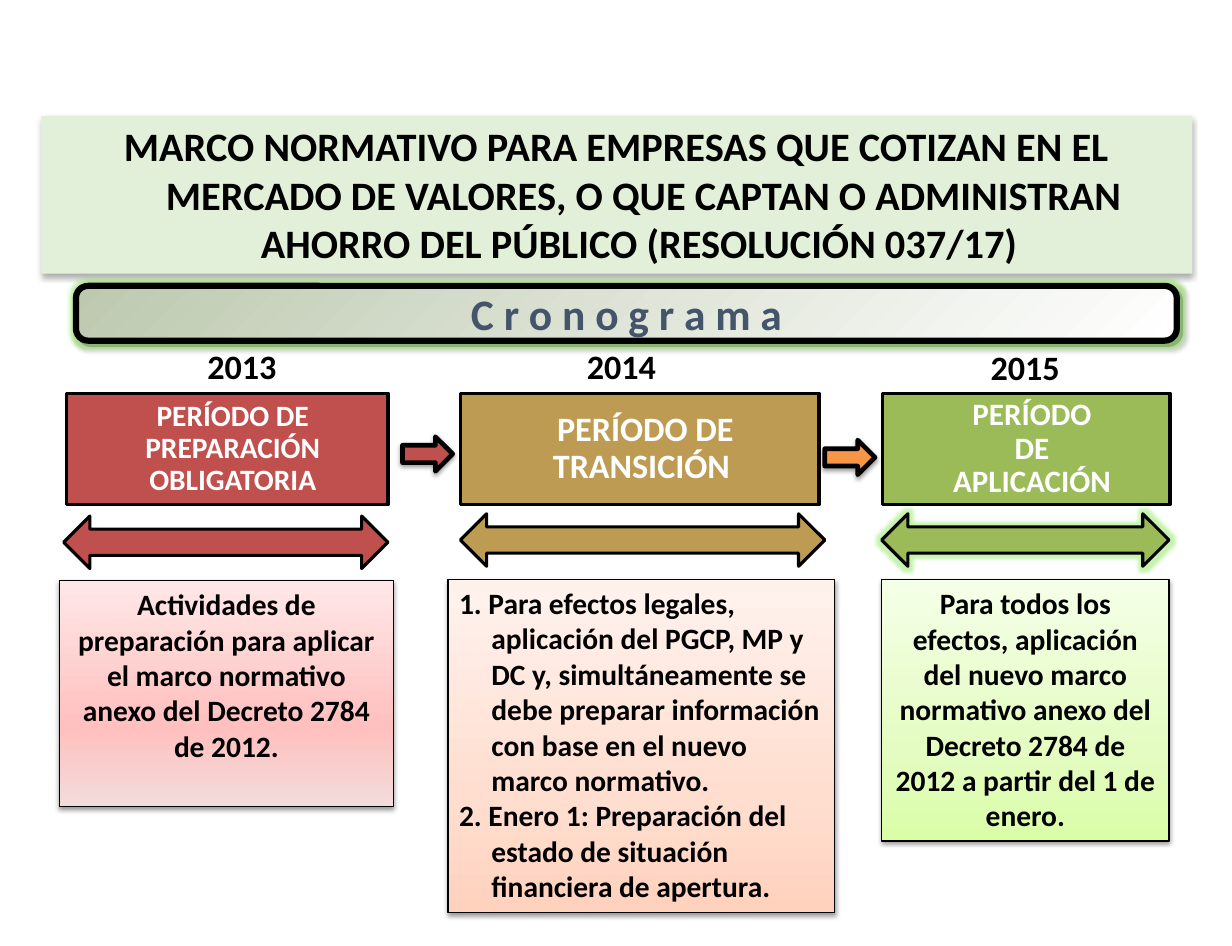
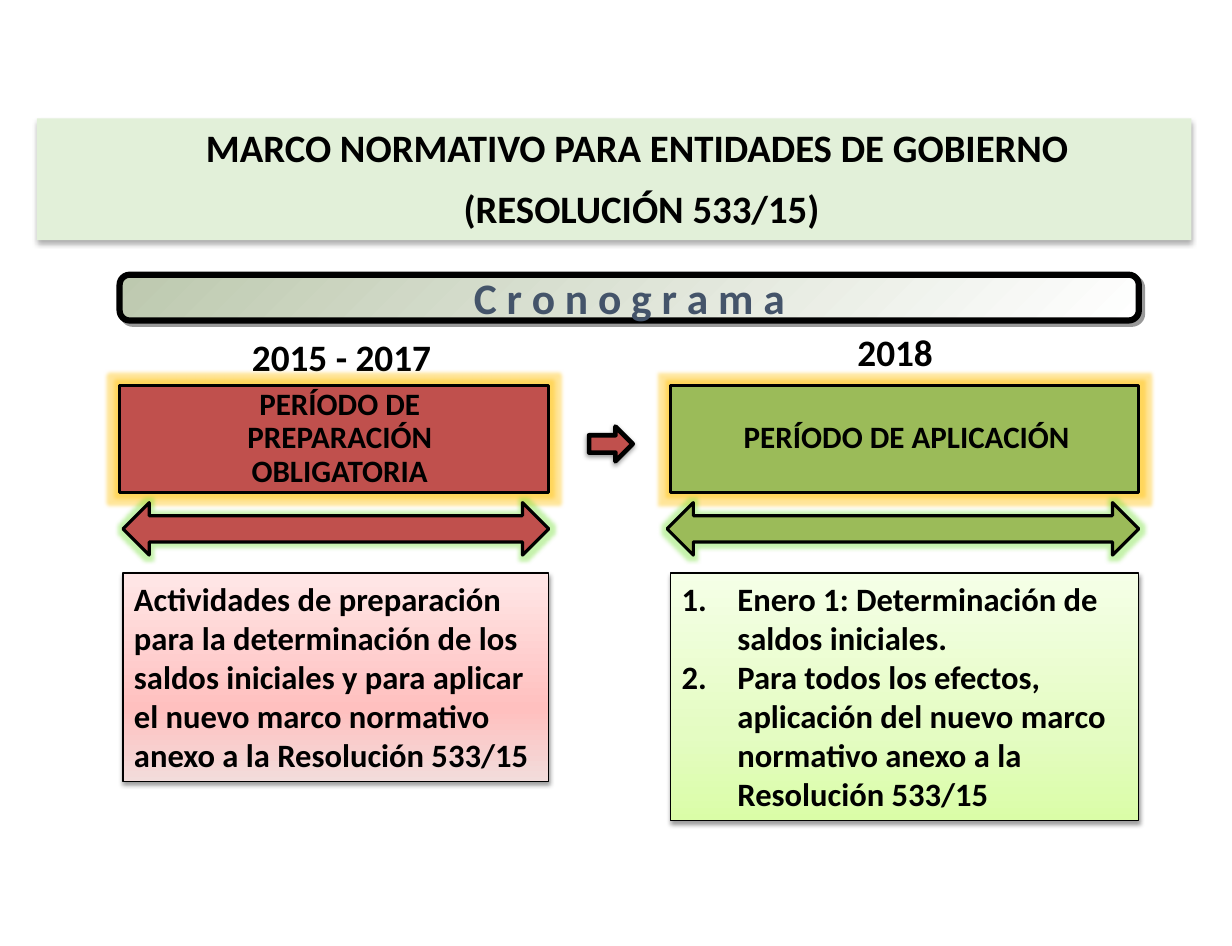
"""Two timelines for adopting the accounting frameworks, 2013-2015 and 2015-2018."""
import lxml.etree
import pptx
import pptx.dml.color
import pptx.enum.shapes
import pptx.enum.text
import pptx.oxml.ns
import pptx.util

SHAPE = pptx.enum.shapes.MSO_SHAPE
CENTER = pptx.enum.text.PP_ALIGN.CENTER
LEFT = pptx.enum.text.PP_ALIGN.LEFT
MIDDLE = pptx.enum.text.MSO_ANCHOR.MIDDLE
TOP = pptx.enum.text.MSO_ANCHOR.TOP
Pt, Inches, qn = pptx.util.Pt, pptx.util.Inches, pptx.oxml.ns.qn

BLACK, WHITE, SLATE, MINT = "000000", "FFFFFF", "44546A", "E2F0D9"
RED, GOLD, GREEN, ORANGE = "C0504D", "BD9B53", "9BBB59", "F79646"
BANNER_FADE = (315, [(0, "BDC9AF"), (100, WHITE)])
NOTE_FADES = {
    RED: (90, [(0, "F2DCDB"), (35, "FFC0BF"), (100, "FFE7E7")]),
    GOLD: (90, [(0, "FFD2BD"), (35, "FFDED0"), (100, "FFF2ED")]),
    GREEN: (90, [(0, "DAFDA7"), (35, "E4FCC2"), (100, "F5FFE7")]),
}
TITLE_SHADOW = {"alpha": 32, "blurRad": 3.5, "dist": 2.2, "dir": 90}
BANNER_SHADOW = {"alpha": 40, "blurRad": 0, "dist": 3, "dir": 45}
SOFT_SHADOW = {"alpha": 38, "blurRad": 3.1, "dist": 1.6, "dir": 90}
GREEN_GLOW, AMBER_GLOW = ("70E030", 5), ("FFC000", 5)
PERIOD_FRAME = {"margin_left": Inches(0.62), "margin_right": Inches(0.52),
                "vertical_anchor": MIDDLE}

prs = pptx.Presentation()
prs.slide_width = Pt(793.75)
prs.slide_height = Pt(609.5)
COLUMN, ROW = prs.slide_width / 100, prs.slide_height / 100


def rgb(value):
    """Return the colour for a hex string."""
    return pptx.dml.color.RGBColor.from_string(value)


def add_part(slide, kind, box, fill=None, line=0, shadow=None, glow=None, texts=(),
             size=20, color=BLACK, frame=None, paragraph=None, indent=None, numbered=False):
    """Add one shape or text box, placed in columns and rows, with its text."""
    x, y, w, h = box
    place = [round(n) for n in (x * COLUMN, y * ROW, w * COLUMN, h * ROW)]
    if kind is None:
        part = slide.shapes.add_textbox(*place)
    else:
        part = slide.shapes.add_shape(kind, *place)
        part.shadow.inherit = False
        if isinstance(fill, tuple):
            angle, stops = fill
            part.fill.gradient()
            part.fill.gradient_angle = angle
            stop_list = next(part._element.spPr.iter(qn("a:gsLst")))
            stop_list.clear()
            for position, tint in stops:
                stop = lxml.etree.SubElement(stop_list, qn("a:gs"), pos=str(position * 1000))
                lxml.etree.SubElement(stop, qn("a:srgbClr"), val=tint)
        else:
            part.fill.solid()
            part.fill.fore_color.rgb = rgb(fill)
        if line:
            part.line.color.rgb = rgb(BLACK)
            part.line.width = Pt(line)
        else:
            part.line.fill.background()
        effects = part._element.spPr.find(qn("a:effectLst"))
        if glow:
            halo = lxml.etree.SubElement(effects, qn("a:glow"), rad=str(Pt(glow[1])))
            tint = lxml.etree.SubElement(halo, qn("a:srgbClr"), val=glow[0])
            lxml.etree.SubElement(tint, qn("a:alpha"), val="40000")
        if shadow:
            cast = lxml.etree.SubElement(
                effects, qn("a:outerShdw"), blurRad=str(Pt(shadow["blurRad"])),
                dist=str(Pt(shadow["dist"])), dir=str(shadow["dir"] * 60000), rotWithShape="0")
            tint = lxml.etree.SubElement(cast, qn("a:srgbClr"), val=BLACK)
            lxml.etree.SubElement(tint, qn("a:alpha"), val=str(shadow["alpha"] * 1000))
    text_frame = part.text_frame
    for key, value in {"word_wrap": True, "vertical_anchor": TOP, **(frame or {})}.items():
        setattr(text_frame, key, value)
    for number, text in enumerate(texts):
        item = text_frame.add_paragraph() if number else text_frame.paragraphs[0]
        if indent:
            properties = item._p.get_or_add_pPr()
            properties.set("marL", str(Inches(indent[0])))
            properties.set("indent", str(Inches(indent[1])))
            if numbered:
                lxml.etree.SubElement(properties, qn("a:buFont"), typeface="+mj-lt")
                lxml.etree.SubElement(properties, qn("a:buAutoNum"), type="arabicPeriod")
        for key, value in {"alignment": CENTER, **(paragraph or {})}.items():
            setattr(item, key, value)
        run = item.add_run()
        run.text = text
        for key, value in {"name": "Calibri", "size": Pt(size), "bold": True}.items():
            setattr(run.font, key, value)
        run.font.color.rgb = rgb(color)
    return part


timelines = [
    {
        "title": {"box": (3.36, 12.28, 93.43, 16.65), "size": 26, "indent": (0.49, -0.49),
                  "texts": ["MARCO NORMATIVO PARA EMPRESAS QUE COTIZAN EN EL MERCADO DE VALORES, "
                            "O QUE CAPTAN O ADMINISTRAN AHORRO DEL PÚBLICO (RESOLUCIÓN 037/17) "]},
        "banner": {"box": (6.17, 30.22, 89.35, 5.79), "glow": GREEN_GLOW},
        "period_rows": (41.56, 11.81), "period_color": WHITE, "period_glow": None,
        "year_size": 22, "note_size": 19,
        "stages": [
            {"color": RED, "year": ("2013", (5.08, 35.89, 29.13, 5.55)),
             "period": ("PERÍODO DE PREPARACIÓN OBLIGATORIA", 5.37, 26.13, 19),
             "span": (5.17, 54.55, 26.32, 5.55), "span_glow": None,
             "note": {"box": (4.81, 61.39, 27.13, 23.85),
                      "texts": ["Actividades de preparación para aplicar el marco normativo "
                                "anexo del Decreto 2784 de 2012."]}},
            {"color": GOLD, "year": ("2014", (34.48, 35.89, 31.94, 5.55)),
             "period": ("PERÍODO DE TRANSICIÓN ", 37.37, 29.12, 22),
             "span": (37.37, 54.31, 29.58, 5.55), "span_glow": None,
             "note": {"box": (36.37, 61.28, 31.39, 35.18), "indent": (0.29, -0.29),
                      "paragraph": {"alignment": LEFT},
                      "texts": ["1. Para efectos legales, aplicación del PGCP, MP y DC y, "
                                "simultáneamente se debe preparar información con base en el "
                                "nuevo marco normativo.",
                                "2. Enero 1: Preparación del estado de situación financiera "
                                "de apertura."]}},
            {"color": GREEN, "year": ("2015", (71.51, 36.01, 23.41, 5.55)),
             "period": ("PERÍODO DE APLICACIÓN ", 71.66, 23.32, 20),
             "span": (71.57, 54.31, 23.32, 5.55), "span_glow": GREEN_GLOW,
             "note": {"box": (71.57, 61.28, 23.32, 27.63),
                      "texts": ["Para todos los efectos, aplicación del nuevo marco normativo "
                                "anexo del Decreto 2784 de 2012 a partir del 1 de enero."]}},
        ],
        "steps": [(RED, (32.67, 46.16, 4.08, 3.66)), (ORANGE, (66.95, 46.52, 4.08, 3.66))],
    },
    {
        "title": {"box": (2.99, 12.51, 93.72, 12.87), "size": 25, "indent": (0.49, 0),
                  "texts": ["MARCO NORMATIVO PARA ENTIDADES DE GOBIERNO ",
                            "(RESOLUCIÓN 533/15)"]},
        "banner": {"box": (9.71, 29.04, 82.73, 4.84)},
        "period_rows": (40.73, 11.33), "period_color": BLACK, "period_glow": AMBER_GLOW,
        "year_size": 24, "note_size": 21,
        "stages": [
            {"color": RED, "year": ("2015 - 2017", (17.97, 34.71, 19.51, 5.9)),
             "period": ("PERÍODO DE PREPARACIÓN OBLIGATORIA", 9.71, 34.83, 20),
             "span": (9.98, 53.13, 34.56, 5.55), "span_glow": GREEN_GLOW,
             "note": {"box": (9.98, 60.57, 34.56, 22.08), "paragraph": {"alignment": LEFT},
                      "texts": ["Actividades de preparación para la determinación de los saldos "
                                "iniciales y para aplicar el nuevo marco normativo anexo a la "
                                "Resolución 533/15"]}},
            {"color": GREEN, "year": ("2018", (67.04, 34.24, 11.25, 5.9)),
             "period": ("PERÍODO DE APLICACIÓN ", 54.43, 38.01, 20),
             "span": (54.15, 53.13, 38.28, 5.55), "span_glow": GREEN_GLOW,
             "note": {"box": (54.43, 60.57, 38.01, 26.21), "indent": (0.5, -0.5),
                      "numbered": True, "paragraph": {"alignment": LEFT},
                      "texts": ["Enero 1: Determinación de saldos iniciales.",
                                "Para todos los efectos, aplicación del nuevo marco normativo "
                                "anexo a la Resolución 533/15"]}},
        ],
        "steps": [(RED, (47.82, 45.1, 3.54, 3.66))],
    },
]

for timeline in timelines:
    slide = prs.slides.add_slide(prs.slide_layouts[6])
    add_part(slide, SHAPE.RECTANGLE, fill=MINT, shadow=TITLE_SHADOW,
             paragraph={"space_after": Pt(9)}, **timeline["title"])
    banner = add_part(slide, SHAPE.ROUNDED_RECTANGLE, fill=BANNER_FADE, line=4,
                      shadow=BANNER_SHADOW, texts=["C r o n o g r a m a"], size=28,
                      color=SLATE, frame={"vertical_anchor": MIDDLE}, **timeline["banner"])
    banner.adjustments[0] = 0.22
    period_top, period_height = timeline["period_rows"]
    for stage in timeline["stages"]:
        year, year_box = stage["year"]
        add_part(slide, None, year_box, texts=[year], size=timeline["year_size"])
        period, left, width, period_size = stage["period"]
        add_part(slide, SHAPE.RECTANGLE, (left, period_top, width, period_height),
                 stage["color"], line=2, glow=timeline["period_glow"], texts=[period],
                 size=period_size, color=timeline["period_color"], frame=PERIOD_FRAME,
                 paragraph={"line_spacing": 0.9})
        add_part(slide, SHAPE.LEFT_RIGHT_ARROW, stage["span"], stage["color"], line=2,
                 glow=stage["span_glow"])
        add_part(slide, SHAPE.RECTANGLE, fill=NOTE_FADES[stage["color"]], line=0.75,
                 shadow=SOFT_SHADOW, size=timeline["note_size"], **stage["note"])
    for step_color, step_box in timeline["steps"]:
        add_part(slide, SHAPE.RIGHT_ARROW, step_box, step_color, line=3, shadow=SOFT_SHADOW)

prs.save("out.pptx")
